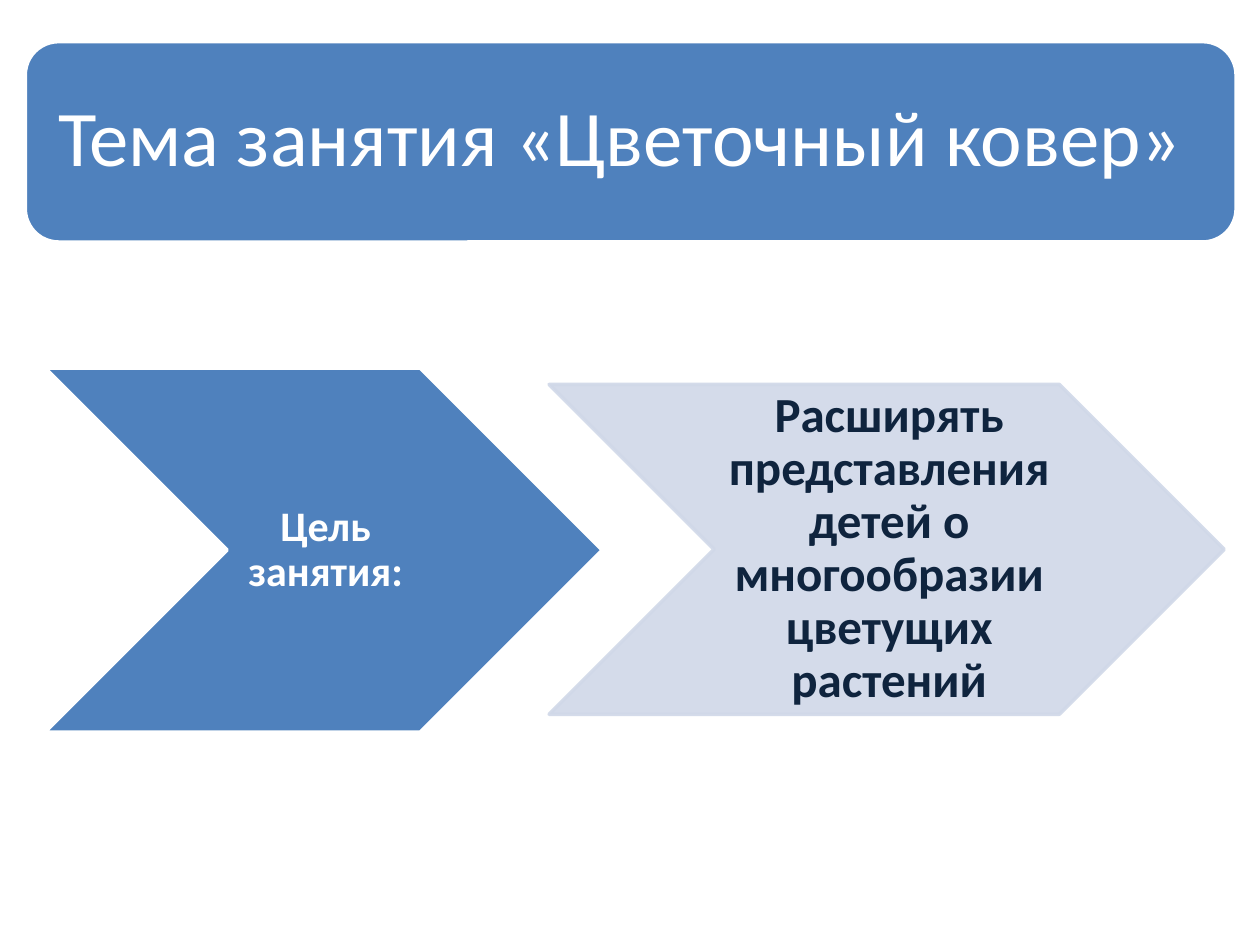
import pptx
import pptx.dml.color
import pptx.enum.shapes
import pptx.enum.text
import pptx.oxml.ns
import pptx.util
from lxml import etree

Cm, Pt = pptx.util.Cm, pptx.util.Pt
RGBColor = pptx.dml.color.RGBColor
MSO_SHAPE = pptx.enum.shapes.MSO_SHAPE
PP_ALIGN = pptx.enum.text.PP_ALIGN
qn = pptx.oxml.ns.qn

WHITE = RGBColor(0xFF, 0xFF, 0xFF)
BLUE = RGBColor(0x4F, 0x81, 0xBD)
PALE = RGBColor(0xD0, 0xD8, 0xE8)
NAVY = RGBColor(0x0F, 0x24, 0x3E)


class SlideBuilder:
    font = "Calibri"
    line_width = Pt(2)

    def __init__(self, prs):
        self.slide = prs.slides.add_slide(prs.slide_layouts[5])

    def shape(self, kind, box, fill, line, opacity=100):
        sp = self.slide.shapes.add_shape(kind, *map(Cm, box))
        sp.shadow.inherit = False
        sp.fill.solid()
        sp.fill.fore_color.rgb = fill
        sp.line.color.rgb = line
        sp.line.width = self.line_width
        if opacity < 100:
            for color in sp._element.spPr.iter(qn("a:srgbClr")):
                etree.SubElement(color, qn("a:alpha"), val=str(opacity * 1000))
        return sp

    def set_text(self, sp, text, size, color, bold, align, insets):
        tf = sp.text_frame
        tf.word_wrap = True
        tf.auto_size = pptx.enum.text.MSO_AUTO_SIZE.NONE
        tf.vertical_anchor = pptx.enum.text.MSO_ANCHOR.MIDDLE
        (tf.margin_left, tf.margin_top,
         tf.margin_right, tf.margin_bottom) = map(Cm, insets)
        p = tf.paragraphs[0]
        p.text = text
        p.alignment = align
        p.line_spacing = 0.9
        p.font.name = self.font
        p.font.size = Pt(size)
        p.font.bold = bold
        p.font.color.rgb = color

    def title(self, box, text, size, color):
        sp = self.slide.shapes.title
        sp.left, sp.top, sp.width, sp.height = map(Cm, box)
        self.set_text(sp, text, size, color, False, PP_ALIGN.LEFT, [0.48] * 4)
        # Bring the title in front of its banner
        self.slide.shapes._spTree.append(sp._element)

    def label(self, box, text, size, color):
        sp = self.slide.shapes.add_textbox(*map(Cm, box))
        self.set_text(sp, text, size, color, True, PP_ALIGN.CENTER,
                      (0.1, 0.05, 0, 0.05))


def main():
    prs = pptx.Presentation()
    prs.slide_width, prs.slide_height = Cm(25.4), Cm(19.05)
    s = SlideBuilder(prs)

    # Title banner
    s.shape(MSO_SHAPE.ROUNDED_RECTANGLE, (0.51, 0.84, 24.41, 4.04), BLUE, WHITE)
    s.title((0.69, 1.02, 24, 3.63), "Тема занятия «Цветочный ковер»", 45, WHITE)

    # Purpose of the lesson
    s.shape(MSO_SHAPE.CHEVRON, (0.91, 7.42, 11.23, 7.34), BLUE, WHITE)
    s.label((4.57, 7.42, 3.89, 7.34), "Цель занятия:", 24, WHITE)

    # Description of the purpose
    s.shape(MSO_SHAPE.CHEVRON, (11.07, 7.75, 13.61, 6.65), PALE, PALE, 90)
    s.label((14.38, 7.75, 6.99, 6.65),
            "Расширять представления детей о многообразии цветущих растений",
            28, NAVY)

    prs.save("out.pptx")


if __name__ == "__main__":
    main()
